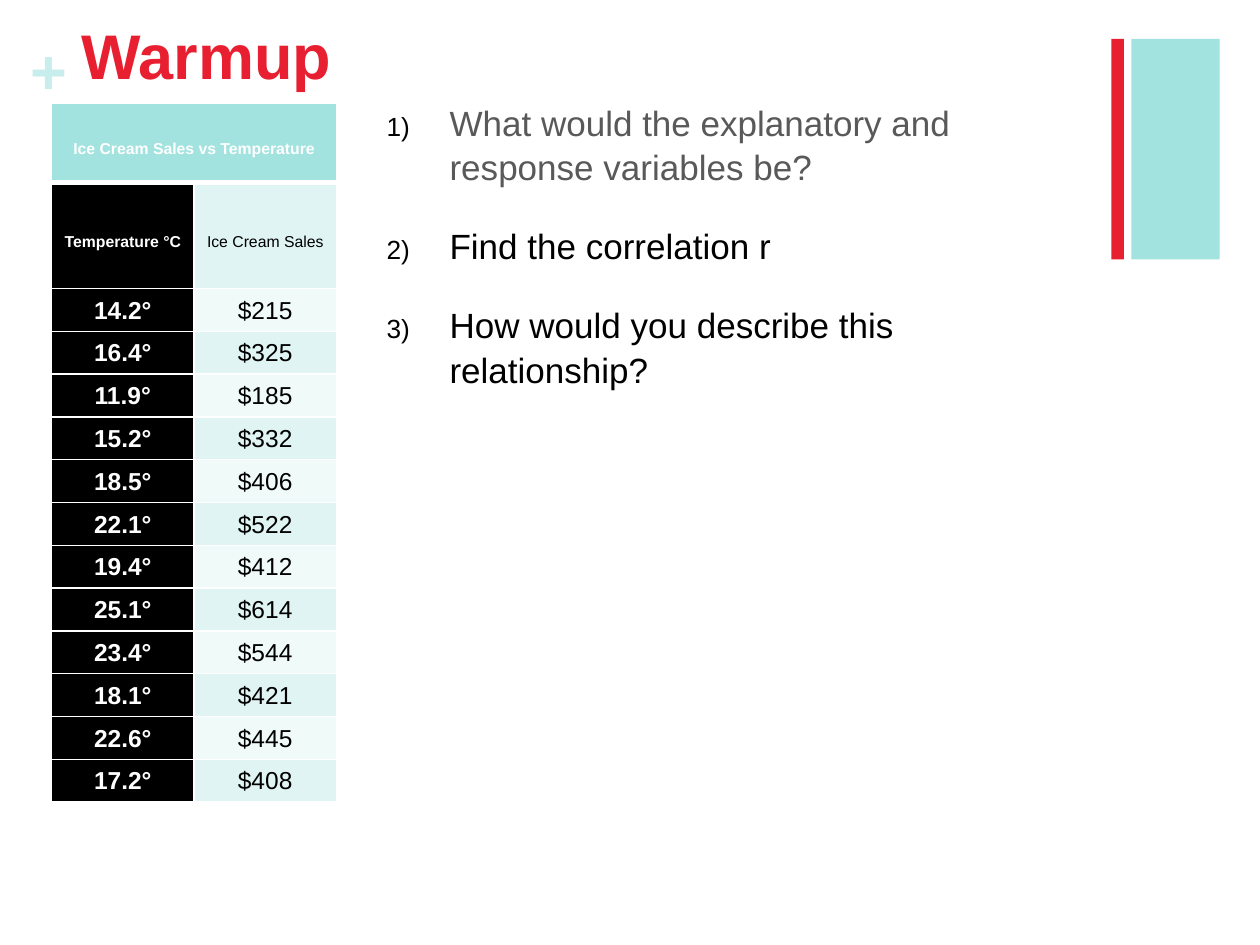
from lxml.etree import SubElement
from pptx import Presentation
from pptx.dml.color import RGBColor
from pptx.enum.shapes import MSO_SHAPE
from pptx.enum.text import MSO_ANCHOR, PP_ALIGN
from pptx.oxml.ns import qn
from pptx.util import Inches, Pt

TEAL = RGBColor(0xA2, 0xE3, 0xDF)
PALE_TEAL = RGBColor(0xC7, 0xEE, 0xEC)
BAND_DARK = RGBColor(0xE0, 0xF4, 0xF3)
BAND_LIGHT = RGBColor(0xF0, 0xFA, 0xF9)
RED = RGBColor(0xE8, 0x1F, 0x30)
GRAY = RGBColor(0x59, 0x59, 0x59)
BLACK = RGBColor(0, 0, 0)
WHITE = RGBColor(0xFF, 0xFF, 0xFF)

prs = Presentation()
prs.slide_width, prs.slide_height = Inches(10), Inches(7.5)
s = prs.slides.add_slide(prs.slide_layouts[6])


def share(x, y, w, h):
    """Turn percentages of the slide into left, top, width, height."""
    W, H = prs.slide_width, prs.slide_height
    return [int(v * side / 100) for v, side in ((x, W), (y, H), (w, W), (h, H))]


def write(p, text, size, color, bold=False):
    r = p.add_run()
    r.text = text
    for name, value in {"name": "Arial", "size": Pt(size), "bold": bold}.items():
        setattr(r.font, name, value)
    r.font.color.rgb = color


# Corner bars
for x, w, color in ((89.8, 7, TEAL), (88.2, 1, RED)):
    bar = s.shapes.add_shape(MSO_SHAPE.RECTANGLE, *share(x, 4.13, w, 23.33))
    bar.shadow.inherit = False
    bar.fill.solid()
    bar.fill.fore_color.rgb = color
    bar.line.fill.background()

# Plus sign and title
for text, box, color, left, top in (
    ("+", (2.4, 3.33, 2.8, 8.13), PALE_TEAL, 0, 0),
    ("Warmup", (5.5, 0.4, 82.6, 16.27), RED, 0.1, 0.1),
):
    tf = s.shapes.add_textbox(*share(*box)).text_frame
    tf.word_wrap = True
    insets = {"margin_left": left, "margin_right": left, "margin_top": top, "margin_bottom": 0}
    for name, value in insets.items():
        setattr(tf, name, Inches(value))
    write(tf.paragraphs[0], text, 36, color, True)

# Numbered questions
questions = (
    ("What would the explanatory and response variables be?", GRAY),
    ("Find the correlation r", BLACK),
    ("How would you describe this relationship?", BLACK),
)
tf = s.shapes.add_textbox(*share(29.7, 9.6, 58.4, 48.67)).text_frame
tf.word_wrap = True
tf.margin_top = Inches(0.07)
for i, (text, color) in enumerate(questions):
    p = tf.paragraphs[0] if i == 0 else tf.add_paragraph()
    p.space_before = Pt(20)
    p.line_spacing = 1.05
    write(p, text, 20, color)
    pPr = p._p.get_or_add_pPr()
    pPr.set("marL", str(Inches(0.5)))
    pPr.set("indent", str(-Inches(0.5)))
    number_color = SubElement(pPr, qn("a:buClr"))
    SubElement(number_color, qn("a:srgbClr"), val=str(BLACK))
    SubElement(pPr, qn("a:buSzPct"), val="75000")
    SubElement(pPr, qn("a:buFont"), typeface="Arial")
    SubElement(pPr, qn("a:buAutoNum"), type="arabicParenR")

# Table of temperatures and sales
rows = [("Ice Cream Sales vs Temperature", ""), ("Temperature °C", "Ice Cream Sales")]
temperatures = (14.2, 16.4, 11.9, 15.2, 18.5, 22.1, 19.4, 25.1, 23.4, 18.1, 22.6, 17.2)
sales = (215, 325, 185, 332, 406, 522, 412, 614, 544, 421, 445, 408)
rows += [(f"{t}°", f"${d}") for t, d in zip(temperatures, sales)]

table = s.shapes.add_table(len(rows), 2, *share(4.1, 10.93, 22.6, 74)).table
table.first_row = table.horz_banding = False
for column in table.columns:
    column.width = Inches(1.13)
for i, row in enumerate(table.rows):
    row.height = Inches((0.63, 0.84)[i] if i < 2 else 0.34)
table.cell(0, 0).merge(table.cell(0, 1))

for i, texts in enumerate(rows):
    for j, text in enumerate(texts):
        cell = table.cell(i, j)
        tcPr = cell._tc.get_or_add_tcPr()
        for side in "LRTB":
            thick = (i == 0 and side == "B") or (i == 1 and side == "T")
            ln = SubElement(tcPr, qn(f"a:ln{side}"), w=str(Pt(3 if thick else 1)))
            fill = SubElement(ln, qn("a:solidFill"))
            SubElement(fill, qn("a:srgbClr"), val=str(WHITE))
        cell.fill.solid()
        band = BAND_DARK if i % 2 else BAND_LIGHT
        cell.fill.fore_color.rgb = TEAL if i == 0 else BLACK if j == 0 else band
        cell.vertical_anchor = MSO_ANCHOR.MIDDLE
        for side in ("left", "right", "top", "bottom"):
            setattr(cell, f"margin_{side}", Inches(0.04))
        if text:
            p = cell.text_frame.paragraphs[0]
            p.alignment = PP_ALIGN.CENTER
            p.line_spacing = Pt(17.2 if i == 1 else 16.5)
            write(p, text, 9 if i < 2 else 14, BLACK if j else WHITE, j == 0)

prs.save("out.pptx")
